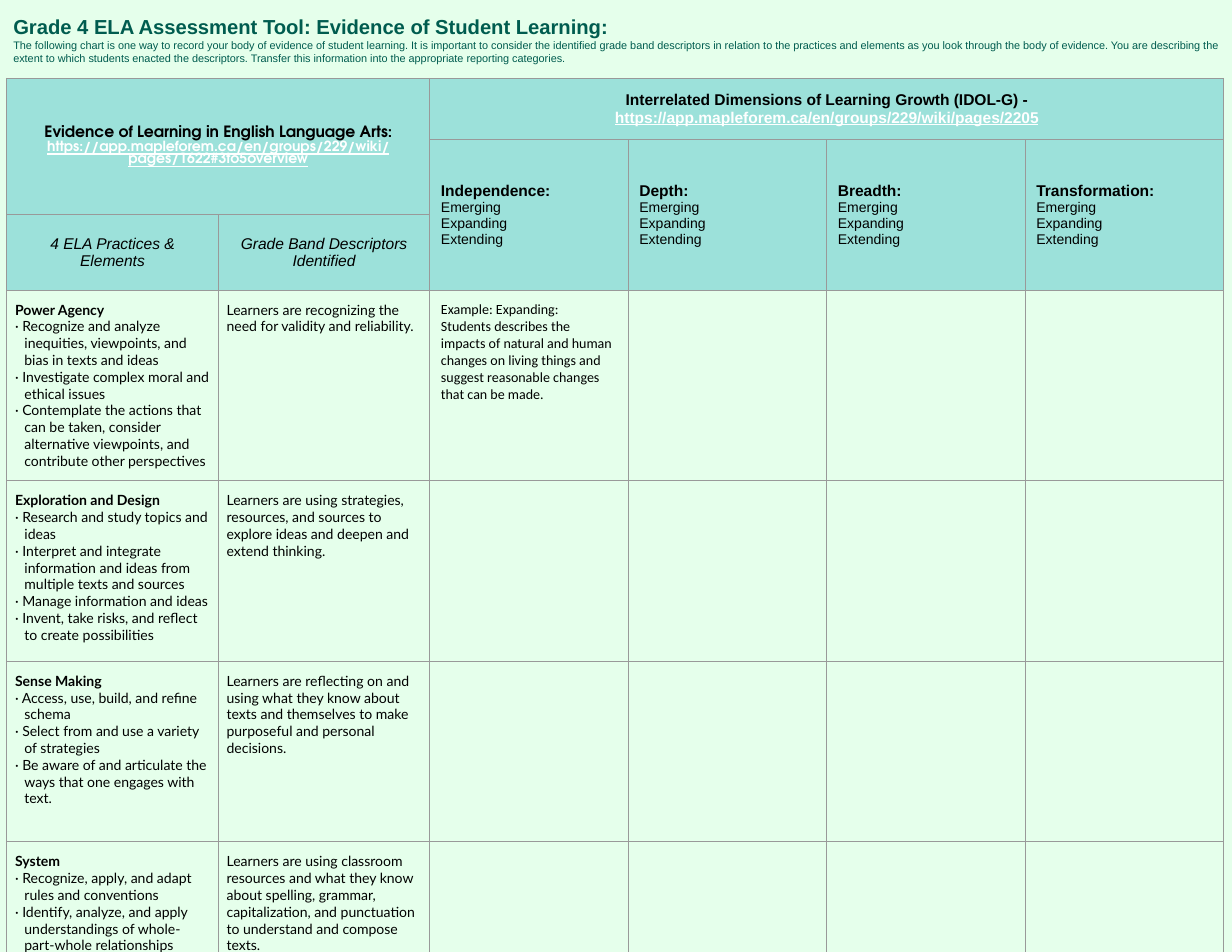
from typing import NamedTuple

from lxml import etree
from pptx import Presentation
from pptx.dml.color import RGBColor
from pptx.enum.text import MSO_ANCHOR, PP_ALIGN
from pptx.oxml.ns import qn
from pptx.util import Pt

TOP, MIDDLE = MSO_ANCHOR.TOP, MSO_ANCHOR.MIDDLE
LEFT, CENTER = PP_ALIGN.LEFT, PP_ALIGN.CENTER

COLORS = {
    "background": "E5FFEB",
    "heading": "005C4F",
    "header": "9CE1DA",
    "border": "999999",
    "ink": "000000",
    "link": "FFFFFF",
}
COLUMN_WIDTHS = [136, 136] + [127.6] * 4
ROW_HEIGHTS = [39.5, 39.5, 48.5, 122, 116, 116, 116]
HANGING = 6
ARIAL, LATO, CALIBRI, ADVENTOR = "Arial", "Lato", "Calibri", "TeX Gyre Adventor"


class Span(NamedTuple):
    text: str
    size: float
    font: str = ARIAL
    color: str = "ink"
    bold: bool = False
    italic: bool = False
    underline: bool = False


class Line(NamedTuple):
    spans: list[Span]
    align: int = LEFT
    hanging: float = 0


class Practice(NamedTuple):
    name: str
    elements: list[str]
    descriptor: str


DIMENSIONS = ["Independence:", "Depth:", "Breadth:", "Transformation:"]
LEVELS = ["Emerging", "Expanding", "Extending"]
SUBHEADINGS = ["4 ELA Practices & Elements", "Grade Band Descriptors Identified"]
EXAMPLE = [
    "Example: Expanding:",
    "Students describes the impacts of natural and human changes on living things "
    "and suggest reasonable changes that can be made.",
]
TITLE = "Grade 4 ELA Assessment Tool: Evidence of Student Learning:"
INTRODUCTION = (
    "The following chart is one way to record your body of evidence of student learning. "
    "It is important to consider the identified grade band descriptors in relation to the "
    "practices and elements as you look through the body of evidence. You are describing "
    "the extent to which students enacted the descriptors. Transfer this information into "
    "the appropriate reporting categories."
)
PRACTICES = [
    Practice(
        "Power Agency",
        [
            "Recognize and analyze inequities, viewpoints, and bias in texts and ideas",
            "Investigate complex moral and ethical issues",
            "Contemplate the actions that can be taken, consider alternative viewpoints, "
            "and contribute other perspectives",
        ],
        "Learners are recognizing the need for validity and reliability.",
    ),
    Practice(
        "Exploration and Design",
        [
            "Research and study topics and ideas",
            "Interpret and integrate information and ideas from multiple texts and sources",
            "Manage information and ideas",
            "Invent, take risks, and reflect to create possibilities",
        ],
        "Learners are using strategies, resources, and sources to explore ideas and "
        "deepen and extend thinking.",
    ),
    Practice(
        "Sense Making",
        [
            "Access, use, build, and refine schema",
            "Select from and use a variety of strategies",
            "Be aware of and articulate the ways that one engages with text.",
        ],
        "Learners are reflecting on and using what they know about texts and themselves "
        "to make purposeful and personal decisions.",
    ),
    Practice(
        "System",
        [
            "Recognize, apply, and adapt rules and conventions",
            "Identify, analyze, and apply understandings of whole-part-whole relationships",
        ],
        "Learners are using classroom resources and what they know about spelling, grammar, "
        "capitalization, and punctuation to understand and compose texts.",
    ),
]


def rgb(name: str) -> RGBColor:
    return RGBColor.from_string(COLORS[name])


def write(frame, lines: list[Line]) -> None:
    frame.word_wrap = True
    for index, line in enumerate(lines):
        paragraph = frame.add_paragraph() if index else frame.paragraphs[0]
        paragraph.alignment = line.align
        if line.hanging:
            properties = paragraph._p.get_or_add_pPr()
            properties.set("marL", str(Pt(line.hanging)))
            properties.set("indent", str(-Pt(line.hanging)))
        for span in line.spans:
            run = paragraph.add_run()
            run.text = span.text
            run.font.size = Pt(span.size)
            run.font.name = span.font
            run.font.bold = span.bold
            run.font.italic = span.italic
            run.font.underline = span.underline
            run.font.color.rgb = rgb(span.color)


def add_border(cell) -> None:
    properties = cell._tc.get_or_add_tcPr()
    for side in ("a:lnL", "a:lnR", "a:lnT", "a:lnB"):
        edge = etree.SubElement(properties, qn(side), w=str(Pt(0.75)))
        fill = etree.SubElement(edge, qn("a:solidFill"))
        etree.SubElement(fill, qn("a:srgbClr"), val=COLORS["border"])


def fill_cell(cell, lines: list[Line], anchor: int = TOP, side: float = 7.2) -> None:
    cell.vertical_anchor = anchor
    cell.margin_left = cell.margin_right = Pt(side)
    cell.margin_top = cell.margin_bottom = Pt(7.2)
    write(cell.text_frame, lines)


def add_title(slide) -> None:
    box = slide.shapes.add_textbox(0, 0, Pt(792), Pt(55.4))
    frame = box.text_frame
    frame.margin_left = frame.margin_right = Pt(8.6)
    frame.margin_top = frame.margin_bottom = Pt(9.5)
    write(frame, [
        Line([Span(TITLE, 13, color="heading", bold=True)]),
        Line([Span(INTRODUCTION, 7, color="heading")]),
    ])


def add_grid(slide):
    table = slide.shapes.add_table(
        len(ROW_HEIGHTS), len(COLUMN_WIDTHS), Pt(4.3), Pt(50.4),
        Pt(sum(COLUMN_WIDTHS)), Pt(sum(ROW_HEIGHTS)),
    ).table
    table.first_row = table.horz_banding = False
    for column, width in zip(table.columns, COLUMN_WIDTHS):
        column.width = Pt(width)
    for index, (row, height) in enumerate(zip(table.rows, ROW_HEIGHTS)):
        row.height = Pt(height)
        for cell in row.cells:
            add_border(cell)
            if index < 3:
                cell.fill.solid()
                cell.fill.fore_color.rgb = rgb("header")
            else:
                cell.fill.background()
    return table


def add_headers(table) -> None:
    table.cell(0, 0).merge(table.cell(1, 1))
    table.cell(0, 2).merge(table.cell(0, 5))
    wiki = "https://app.mapleforem.ca/en/groups/229/wiki/pages/"
    fill_cell(table.cell(0, 0), [
        Line([Span("Evidence of Learning in English Language Arts:", 10, ADVENTOR, bold=True)], CENTER),
        Line([Span(wiki + "1622#3to5overview", 9, ADVENTOR, "link", True, underline=True)], CENTER),
    ], MIDDLE)
    fill_cell(table.cell(0, 2), [Line([
        Span("Interrelated Dimensions of Learning Growth (IDOL-G) - ", 10, bold=True),
        Span(wiki + "2205", 10, color="link", bold=True, underline=True),
    ], CENTER)], MIDDLE)
    for column, dimension in enumerate(DIMENSIONS, 2):
        table.cell(1, column).merge(table.cell(2, column))
        levels = [Line([Span(level, 9)]) for level in LEVELS]
        fill_cell(table.cell(1, column), [Line([Span(dimension, 10, bold=True)])] + levels, MIDDLE)
    for column, subheading in enumerate(SUBHEADINGS):
        fill_cell(table.cell(2, column), [Line([Span(subheading, 10, italic=True)], CENTER)], MIDDLE)


def add_practices(table) -> None:
    for row, practice in enumerate(PRACTICES, 3):
        elements = [Line([Span(f"· {element}", 9, LATO)], hanging=HANGING) for element in practice.elements]
        fill_cell(table.cell(row, 0), [Line([Span(practice.name, 9, LATO, bold=True)])] + elements, side=5.4)
        fill_cell(table.cell(row, 1), [Line([Span(practice.descriptor, 9, LATO)])], side=5.4)
    fill_cell(table.cell(3, 2), [Line([Span(text, 9, CALIBRI)]) for text in EXAMPLE])


def main() -> None:
    """Build the Grade 4 ELA assessment slide."""
    deck = Presentation()
    deck.slide_width, deck.slide_height = Pt(792), Pt(612)
    slide = deck.slides.add_slide(deck.slide_layouts[6])
    slide.background.fill.solid()
    slide.background.fill.fore_color.rgb = rgb("background")
    add_title(slide)
    table = add_grid(slide)
    add_headers(table)
    add_practices(table)
    deck.save("out.pptx")


if __name__ == "__main__":
    main()
